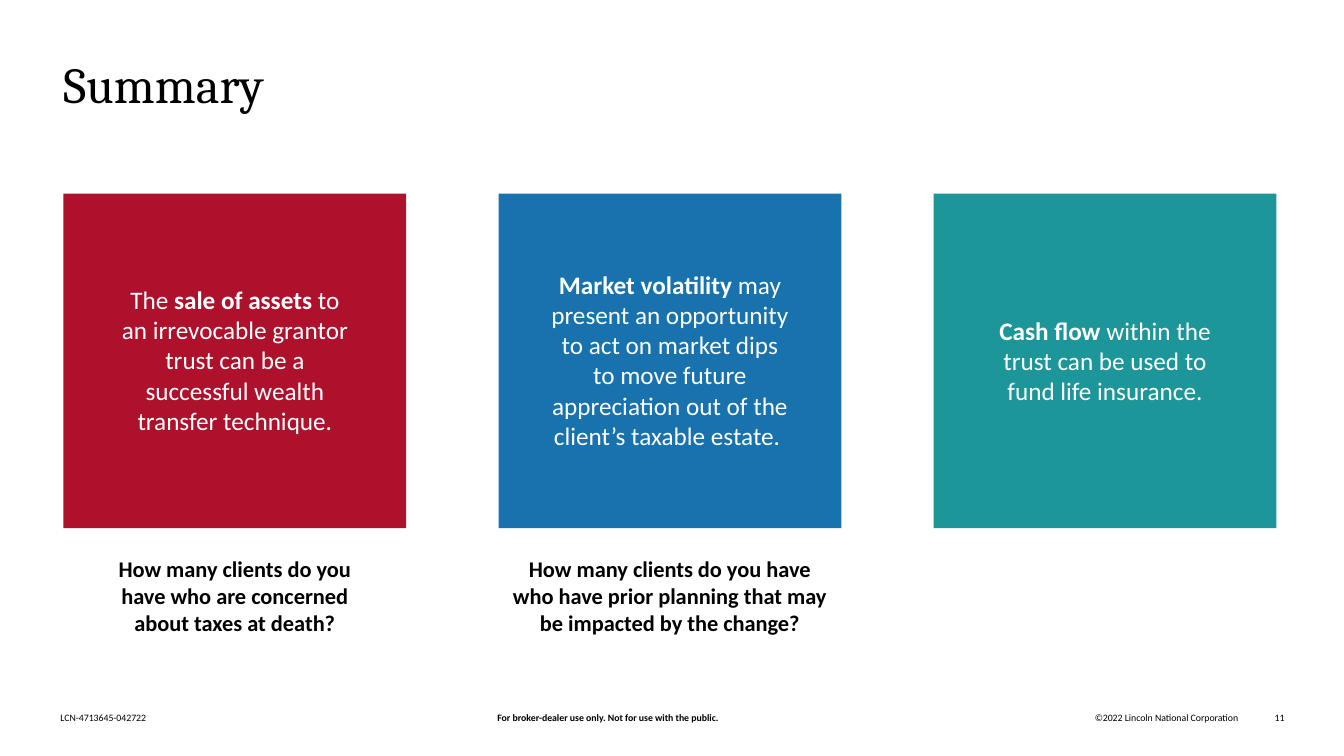
from pptx import Presentation
from pptx.dml.color import RGBColor
from pptx.enum.shapes import MSO_SHAPE
from pptx.enum.text import MSO_ANCHOR, PP_ALIGN
from pptx.util import Inches, Pt

RECT = MSO_SHAPE.RECTANGLE
TOP, BOTTOM = MSO_ANCHOR.TOP, MSO_ANCHOR.BOTTOM
LEFT, MID, RIGHT = PP_ALIGN.LEFT, PP_ALIGN.CENTER, PP_ALIGN.RIGHT
COLORS = {"red": "AD112B", "blue": "1772AE", "teal": "1D9699",
          "white": "FFFFFF", "black": "000000"}


class Deck:
    """Holds the style and the current slide."""

    def __init__(self):
        self.prs = Presentation()
        self.prs.slide_width, self.prs.slide_height = Inches(13.33), Inches(7.5)
        self.slide = self.prs.slides.add_slide(self.prs.slide_layouts[6])

    def color(self, name):
        return RGBColor.from_string(COLORS[name])

    def text(self, box, runs, size, align=MID, color="black", font="Calibri",
             anchor=TOP, inset=True, after=0):
        shape = self.slide.shapes.add_textbox(*map(Inches, box))
        frame = shape.text_frame
        frame.word_wrap = True
        frame.vertical_anchor = anchor
        if not inset:
            frame.margin_left = frame.margin_right = 0
            frame.margin_top = frame.margin_bottom = 0
        para = frame.paragraphs[0]
        para.alignment = align
        para.space_after = Pt(after)
        for words, bold in runs:
            run = para.add_run()
            run.text = words
            run.font.name = font
            run.font.size = Pt(size)
            run.font.bold = bold
            run.font.color.rgb = self.color(color)

    def card(self, box, fill):
        shape = self.slide.shapes.add_shape(RECT, *map(Inches, box))
        shape.shadow.inherit = False
        shape.fill.solid()
        shape.fill.fore_color.rgb = self.color(fill)
        shape.line.fill.background()


def main():
    deck = Deck()
    deck.text((0.63, 0.53, 12.07, 0.57), [("Summary", False)], 36, LEFT,
              font="Cambria", inset=False)

    cards = [
        ("red", 2.5, 1.62,
         [("The ", False), ("sale of assets ", True),
          ("to an irrevocable grantor trust can be a successful wealth "
           "transfer technique.", False)],
         2.67, "How many clients do you have who are concerned about taxes "
         "at death?"),
        ("blue", 2.6, 1.92,
         [("Market volatility ", True),
          ("may present an opportunity to act on market dips to move future "
           "appreciation out of the client’s taxable estate. ", False)],
         3.4, "How many clients do you have who have prior planning that may "
         "be impacted by the change?"),
        ("teal", 2.5, 1.01,
         [("Cash flow ", True),
          ("within the trust can be used to fund life insurance.", False)],
         0, ""),
    ]
    left, top, wide, high, step = 0.63, 1.92, 3.4, 3.32, 4.315
    for i, (fill, width, height, runs, span, ask) in enumerate(cards):
        x = left + i * step
        mid = x + wide / 2
        deck.card((x, top, wide, high), fill)
        deck.text((mid - width / 2, top + (high - height) / 2, width, height),
                  runs, 18, color="white")
        if ask:
            deck.text((mid - span / 2, 5.46, span, 0.91), [(ask, True)], 16,
                      after=8)

    notes = [
        (0.6, 1.87, LEFT, "LCN-4713645-042722", False),
        (2.23, 7.6, MID,
         "For broker-dealer use only. Not for use with the public.", True),
        (9.83, 2.45, RIGHT, "©2022 Lincoln National Corporation", False),
        (12.41, 0.33, RIGHT, "11", False),
    ]
    for x, width, align, words, bold in notes:
        deck.text((x, 7.06, width, 0.12), [(words, bold)], 7, align,
                  anchor=BOTTOM, inset=False)

    deck.prs.save("out.pptx")


if __name__ == "__main__":
    main()
